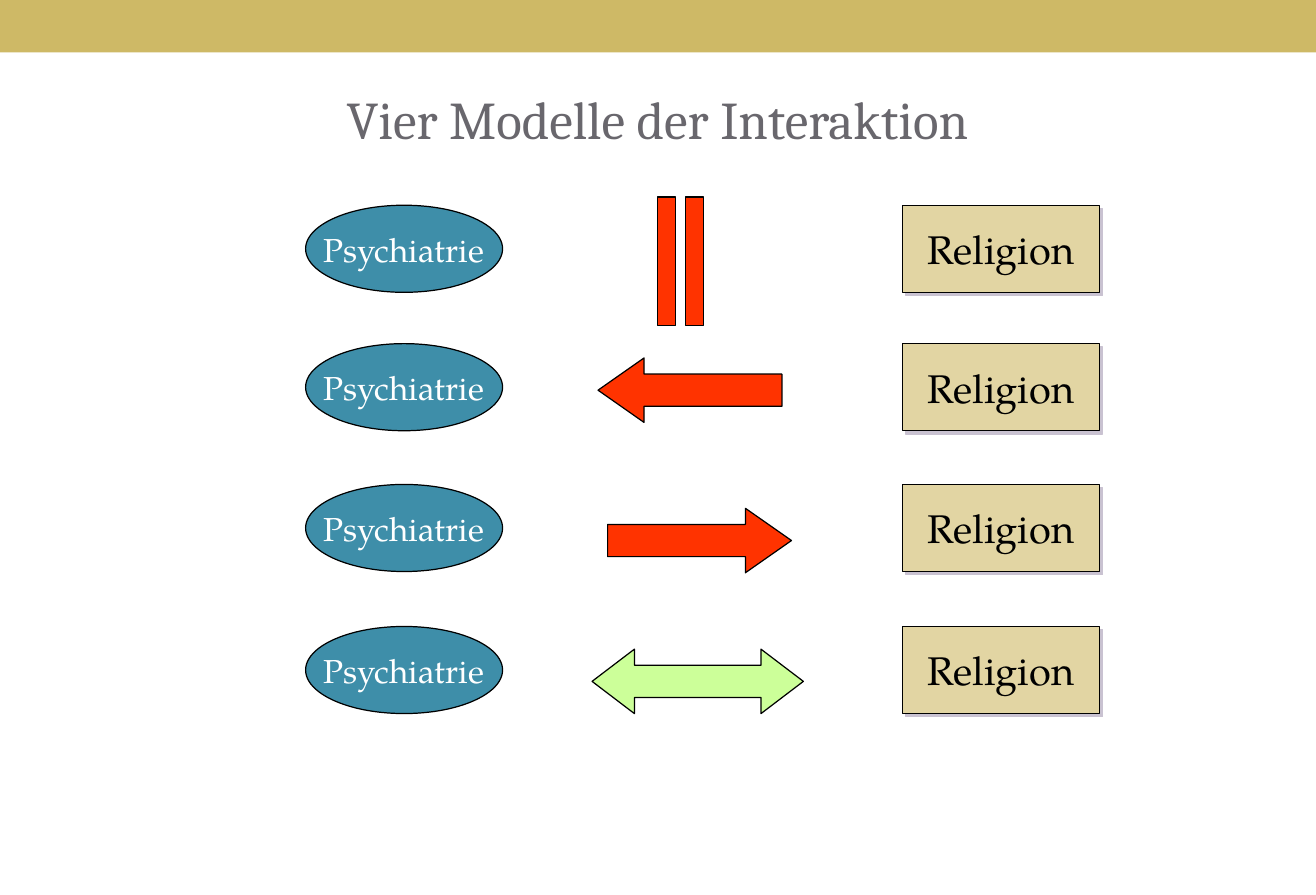
from lxml.etree import SubElement
from pptx import Presentation
from pptx.dml.color import RGBColor
from pptx.enum.shapes import MSO_SHAPE as Shape
from pptx.enum.text import MSO_ANCHOR as Anchor, PP_ALIGN as Align
from pptx.oxml.ns import qn
from pptx.util import Cm, Inches, Pt

# Content
TITLE = "Vier Modelle der Interaktion"
LEFT_LABEL, RIGHT_LABEL = "Psychiatrie", "Religion"
# Arrow of each model: shape, left, top, width, adjustments, colour
ARROWS = [
    (Shape.LEFT_ARROW, 5.01, 3.0, 1.54, (0.5, 0.714), "red"),
    (Shape.RIGHT_ARROW, 5.09, 4.26, 1.54, (0.5, 0.714), "red"),
    (Shape.LEFT_RIGHT_ARROW, 4.96, 5.44, 1.77, (0.5, 0.657), "green"),
]
COLORS = {
    "band": "CEB966", "blue": "3E8EA9", "sand": "E2D5A3", "red": "FF3300",
    "green": "CCFF99", "shadow": "C9C2D1", "title": "69676D",
    "black": "000000", "white": "FFFFFF",
}
HEAD_FONT, BODY_FONT = "Cambria", "TeX Gyre Pagella"

# Slide size, then the grid in inches
SLIDE_W, SLIDE_H = Cm(28), Cm(19.05)
ROW_TOPS = [1.72, 2.88, 4.06, 5.25]
LEFT_COL, RIGHT_COL = 2.56, 7.56
BOX_W, BOX_H, ARROW_H = 1.65, 0.73, 0.54
BAR_LEFT, BAR_TOP, BAR_PITCH, BAR_W, BAR_H = 5.51, 1.65, 0.23, 0.15, 1.08


def color(name):
    return RGBColor.from_string(COLORS[name])


def add_shape(shapes, kind, box, fill, line="black"):
    sp = shapes.add_shape(kind, *map(Inches, box))
    sp.fill.solid()
    sp.fill.fore_color.rgb = color(fill)
    if line:
        sp.line.color.rgb = color(line)
        sp.line.width = Pt(0.75)
    else:
        sp.line.fill.background()
    sp.shadow.inherit = False
    return sp


def add_text(sp, text, font, size, ink, wrap=False):
    tf = sp.text_frame
    tf.word_wrap = wrap
    tf.vertical_anchor = Anchor.MIDDLE
    p = tf.paragraphs[0]
    p.alignment = Align.CENTER
    r = p.add_run()
    r.text = text
    r.font.name, r.font.size = font, Pt(size)
    r.font.color.rgb = color(ink)


def add_shadow(sp):
    effects = sp._element.spPr.find(qn("a:effectLst"))
    shadow = SubElement(effects, qn("a:outerShdw"), dist=str(Pt(2.8)),
                        dir="2700000", algn="ctr", rotWithShape="0")
    SubElement(shadow, qn("a:srgbClr"), val=COLORS["shadow"])


def main():
    prs = Presentation()
    prs.slide_width, prs.slide_height = SLIDE_W, SLIDE_H
    shapes = prs.slides.add_slide(prs.slide_layouts[6]).shapes

    # Top band and title
    add_shape(shapes, Shape.RECTANGLE, (0, 0, SLIDE_W.inches, 0.44), "band", line=None)
    title = shapes.add_textbox(*map(Inches, (0.55, 0.36, 9.92, 1.26)))
    add_text(title, TITLE, HEAD_FONT, 32, "title", wrap=True)

    # One pair of labels per model
    for top in ROW_TOPS:
        ellipse = add_shape(shapes, Shape.OVAL, (LEFT_COL, top, BOX_W, BOX_H), "blue")
        add_text(ellipse, LEFT_LABEL, BODY_FONT, 20, "white")
        box = add_shape(shapes, Shape.RECTANGLE, (RIGHT_COL, top, BOX_W, BOX_H), "sand")
        add_text(box, RIGHT_LABEL, BODY_FONT, 24, "black")
        add_shadow(box)

    # Barrier of the first model
    barrier = shapes.add_group_shape()
    for i in range(2):
        left = BAR_LEFT + i * BAR_PITCH
        add_shape(barrier.shapes, Shape.RECTANGLE, (left, BAR_TOP, BAR_W, BAR_H), "red")

    # Arrows of the other models
    for kind, left, top, width, adjustments, fill in ARROWS:
        arrow = add_shape(shapes, kind, (left, top, width, ARROW_H), fill)
        for i, value in enumerate(adjustments):
            arrow.adjustments[i] = value

    prs.save("out.pptx")


if __name__ == "__main__":
    main()
